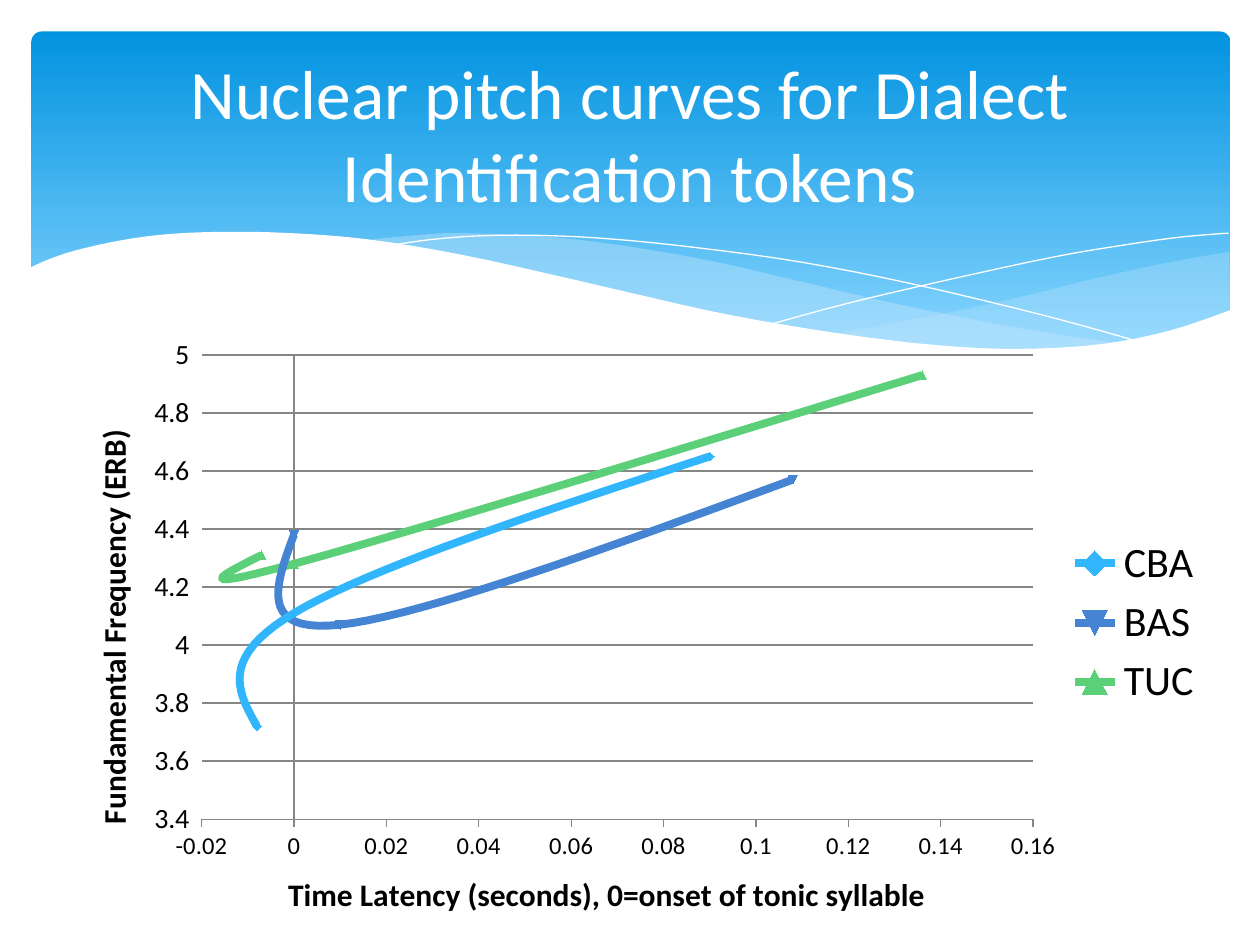
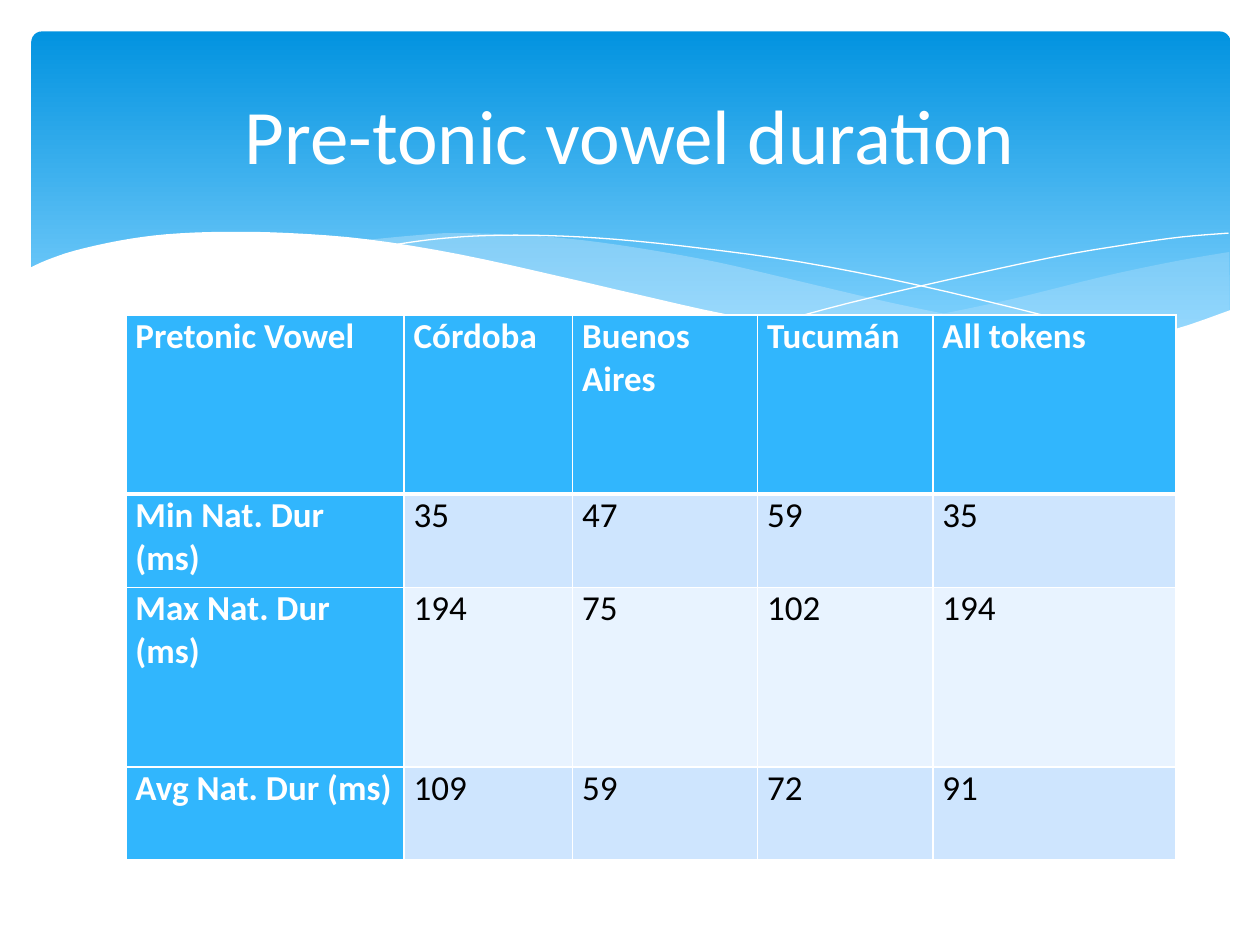
from dataclasses import dataclass

from lxml.etree import SubElement
from pptx import Presentation
from pptx.chart.axis import ValueAxis
from pptx.chart.data import XyChartData
from pptx.chart.series import XySeries
from pptx.dml.color import RGBColor
from pptx.enum.chart import XL_CHART_TYPE as ChartType
from pptx.enum.chart import XL_LEGEND_POSITION as LegendPosition
from pptx.enum.chart import XL_TICK_LABEL_POSITION as LabelPosition
from pptx.enum.chart import XL_TICK_MARK as TickMark
from pptx.enum.shapes import MSO_SHAPE as Shape
from pptx.enum.text import MSO_ANCHOR as Anchor
from pptx.enum.text import PP_ALIGN as Align
from pptx.oxml.ns import qn
from pptx.oxml.xmlchemy import BaseOxmlElement as Element
from pptx.slide import Slide
from pptx.table import _Cell as Cell
from pptx.text.text import Font
from pptx.util import Pt

FONT = "Calibri"
WHITE = RGBColor(0xFF, 0xFF, 0xFF)
BLACK = RGBColor(0x00, 0x00, 0x00)
GREY = RGBColor(0x86, 0x86, 0x86)
BAND_TOP = RGBColor(0x02, 0x93, 0xE0)
BAND_BOTTOM = RGBColor(0x83, 0xD3, 0xFE)
SWELL = RGBColor(0xC6, 0xE7, 0xFC)
SKY = RGBColor(0x31, 0xB6, 0xFD)
BLUE = RGBColor(0x45, 0x84, 0xD3)
GREEN = RGBColor(0x5B, 0xD0, 0x78)
ROW_TINTS = (RGBColor(0xCE, 0xE5, 0xFE), RGBColor(0xE8, 0xF3, 0xFF))

CURVE_STEPS = 4
THIN, THICK = 1, 3

Point = tuple[float, float]
Stroke = list[Point]


@dataclass(frozen=True)
class Wave:
    strokes: list[Stroke]
    fill: RGBColor
    opacity: int


@dataclass(frozen=True)
class Dialect:
    name: str
    colour: RGBColor
    points: list[Point]


@dataclass(frozen=True)
class AxisStyle:
    title: str
    title_at: Point
    minimum: float
    maximum: float
    step: float
    label_size: int
    gridlines: bool
    rotation: int


RIGHT_SWELL_TOP = [
    (702.5, 144), (673.2, 149), (641.5, 155.5), (619.9, 160.6),
    (579.6, 170.6), (542.2, 178.6), (508.3, 185), (475.9, 190.8)]
RIGHT_SWELL_BOTTOM = [
    (475.9, 190.8), (507.6, 195.1), (536.4, 198), (562.3, 199.4), (586, 200),
    (614.9, 198.7), (640, 195.8), (663.1, 190.8), (683.3, 185), (702.7, 177.8)]
MIDDLE_SWELL_TOP = [
    (643, 196.6), (602.6, 190.8), (558, 182.9), (508.3, 172.8),
    (452.9, 159.8), (409.7, 149.8), (370.1, 142.6), (334.8, 137.5),
    (302.4, 134.6), (259.9, 133.2), (236.2, 134.6), (205.9, 137.5)]
MIDDLE_SWELL_BOTTOM = [
    (205.9, 137.5), (246.2, 143.3), (290.9, 151.9), (323.3, 159.8),
    (381.6, 172.8), (432.7, 183.6), (478.8, 191.5), (519.8, 197.3),
    (556.6, 199.4), (589, 200.2), (617, 199.4), (643, 196.6)]
FALLING_LINE = [
    (222.5, 140.4), (236.2, 138.2), (254.2, 136.1), (278.6, 134.6),
    (311.8, 134.6), (352.1, 136.8), (400.3, 141.8), (457.9, 149.8),
    (523.4, 162.7), (598.3, 180.7), (653, 195.8)]
RISING_LINE = [
    (441.4, 185), (483.8, 173.5), (538.6, 160.6), (601.9, 146.9),
    (644.4, 139.7), (675.4, 135.4), (702, 133.2)]
PAGE_CREST = [
    (703.4, 177.1), (669.6, 188.6), (630, 196.6), (582.5, 199.4),
    (535.7, 197.3), (481, 190.8), (416.9, 180), (362.2, 167.8),
    (321.8, 158.4), (262.8, 145.4), (210.2, 136.8), (165.6, 133.2),
    (127.4, 132.5), (95, 133.9), (68.4, 137.5), (42.5, 143.3),
    (25.9, 149), (16.6, 153.4)]
PAGE_BASE = [(16.6, 236.9), (703.4, 236.9)]

SWELLS = [
    Wave([RIGHT_SWELL_TOP, RIGHT_SWELL_BOTTOM], SWELL, 29),
    Wave([MIDDLE_SWELL_TOP, MIDDLE_SWELL_BOTTOM], SWELL, 40),
]
PAGE_EDGE = Wave([PAGE_CREST, PAGE_BASE], WHITE, 100)

DIALECTS = [
    Dialect("CBA", SKY, [(-0.008, 3.72), (0, 4.11), (0.09, 4.65)]),
    Dialect("BAS", BLUE, [(0, 4.38), (0.01, 4.07), (0.108, 4.57)]),
    Dialect("TUC", GREEN, [(-0.007, 4.31), (0, 4.28), (0.136, 4.93)]),
]
TIME = AxisStyle(
    "Time Latency (seconds), 0=onset of tonic syllable", title_at=(0.19, 0.91),
    minimum=-0.02, maximum=0.16, step=0.02, label_size=14, gridlines=False, rotation=0)
FREQUENCY = AxisStyle(
    "Fundamental Frequency (ERB)", title_at=(0.02, 0.17),
    minimum=3.4, maximum=5, step=0.2, label_size=16, gridlines=True, rotation=-90)

DURATIONS = [
    ("Pretonic Vowel", "Córdoba", "Buenos Aires", "Tucumán", "All tokens"),
    ("Min Nat. Dur (ms)", "35", "47", "59", "35"),
    ("Max Nat. Dur (ms)", "194", "75", "102", "194"),
    ("Avg Nat. Dur (ms)", "109", "59", "72", "91"),
]
COLUMN_WIDTHS = (159, 96.3, 105.7, 100.2, 138.8)
ROW_HEIGHTS = (102.4, 53.4, 102.4, 53.4)


def style_font(font: Font, size: float, colour: RGBColor, bold: bool = False) -> None:
    font.name, font.size, font.bold = FONT, Pt(size), bold
    font.color.rgb = colour


def catmull_rom(before: float, start: float, end: float, after: float, t: float) -> float:
    slope = end - before
    bend = 2 * before - 5 * start + 4 * end - after
    twist = 3 * start - before - 3 * end + after
    return start + (slope * t + bend * t**2 + twist * t**3) / 2


def smooth(knots: Stroke) -> Stroke:
    if len(knots) < 3:
        return knots
    padded = [knots[0], *knots, knots[-1]]
    curve = [knots[0]]
    for neighbours in zip(padded, padded[1:], padded[2:], padded[3:]):
        xs, ys = zip(*neighbours)
        for step in range(1, CURVE_STEPS + 1):
            t = step / CURVE_STEPS
            curve.append((catmull_rom(*xs, t), catmull_rom(*ys, t)))
    return curve


def draw_outline(slide: Slide, strokes: list[Stroke], closed: bool) -> Shape:
    outline = [(Pt(x), Pt(y)) for stroke in strokes for x, y in smooth(stroke)]
    builder = slide.shapes.build_freeform(*outline[0])
    builder.add_line_segments(outline[1:], close=closed)
    shape = builder.convert_to_shape()
    shape.shadow.inherit = False
    return shape


def draw_wave(slide: Slide, wave: Wave) -> None:
    shape = draw_outline(slide, wave.strokes, closed=True)
    shape.line.fill.background()
    shape.fill.solid()
    shape.fill.fore_color.rgb = wave.fill
    if wave.opacity < 100:
        colour = shape.element.spPr.find(f"{qn('a:solidFill')}/{qn('a:srgbClr')}")
        SubElement(colour, qn("a:alpha"), val=str(wave.opacity * 1000))


def draw_hairline(slide: Slide, stroke: Stroke) -> None:
    shape = draw_outline(slide, [stroke], closed=False)
    shape.fill.background()
    shape.line.color.rgb = WHITE
    shape.line.width = Pt(0)


def draw_band(slide: Slide) -> None:
    band = slide.shapes.add_shape(Shape.ROUNDED_RECTANGLE, Pt(18), Pt(18), Pt(685), Pt(194.5))
    band.adjustments[0] = 0.03
    band.shadow.inherit = False
    band.line.fill.background()
    band.fill.gradient()
    band.fill.gradient_angle = 270
    for stop, colour, position in zip(band.fill.gradient_stops, (BAND_TOP, BAND_BOTTOM), (0, 0.9)):
        stop.color.rgb = colour
        stop.position = position


def draw_header(slide: Slide, title: str, size: float) -> None:
    draw_band(slide)
    for swell in SWELLS:
        draw_wave(slide, swell)
    for stroke in (FALLING_LINE, RISING_LINE):
        draw_hairline(slide, stroke)
    draw_wave(slide, PAGE_EDGE)

    frame = slide.shapes.add_textbox(Pt(36), Pt(27), Pt(648), Pt(98.6)).text_frame
    frame.word_wrap = True
    frame.vertical_anchor = Anchor.MIDDLE
    frame.text = title
    paragraph = frame.paragraphs[0]
    paragraph.alignment = Align.CENTER
    style_font(paragraph.runs[0].font, size, WHITE)


def place(parent: Element, index: int, **position: float | str) -> None:
    for automatic in parent.findall(qn("c:layout")):
        parent.remove(automatic)
    layout = parent.makeelement(qn("c:layout"))
    manual = SubElement(layout, qn("c:manualLayout"))
    for tag, value in position.items():
        SubElement(manual, qn(f"c:{tag}"), val=str(value))
    parent.insert(index, layout)


def style_axis(axis: ValueAxis, style: AxisStyle) -> None:
    axis.minimum_scale, axis.maximum_scale = style.minimum, style.maximum
    axis.major_unit = style.step
    axis.has_major_gridlines = style.gridlines
    if style.gridlines:
        axis.major_gridlines.format.line.color.rgb = GREY
    axis.format.line.color.rgb = GREY
    axis.major_tick_mark, axis.minor_tick_mark = TickMark.OUTSIDE, TickMark.NONE
    axis.tick_label_position = LabelPosition.LOW
    labels = axis.tick_labels
    labels.font.size = Pt(style.label_size)
    labels.number_format, labels.number_format_is_linked = "General", False

    title = axis.axis_title
    title.text_frame.text = style.title
    style_font(title.text_frame.paragraphs[0].runs[0].font, 18, BLACK, bold=True)
    body = title._element.find(f".//{qn('a:bodyPr')}")
    body.set("rot", str(style.rotation * 60000))
    body.set("vert", "horz")
    x, y = style.title_at
    place(title._element, 1, xMode="edge", yMode="edge", x=x, y=y)


def style_curve(series: XySeries, dialect: Dialect, marker_index: int) -> None:
    series._element.find(qn("c:idx")).set("val", str(marker_index))
    series._element.find(qn("c:smooth")).set("val", "1")
    series.format.line.width = Pt(4.5)
    series.marker.size = 5
    series.marker.format.fill.solid()
    for colour in (series.format.line.color, series.marker.format.fill.fore_color,
                   series.marker.format.line.color):
        colour.rgb = dialect.colour


def draw_pitch_chart(slide: Slide) -> None:
    data = XyChartData()
    for dialect in DIALECTS:
        curve = data.add_series(dialect.name)
        for time, pitch in dialect.points:
            curve.add_data_point(time, pitch)
    chart = slide.shapes.add_chart(
        ChartType.XY_SCATTER_SMOOTH, Pt(36), Pt(185.8), Pt(660), Pt(342), data).chart
    chart.has_title = False
    style_font(chart.font, 10, BLACK)
    chart.has_legend = True
    chart.legend.position = LegendPosition.RIGHT
    chart.legend.include_in_layout = False
    chart.legend.font.size = Pt(24)
    style_axis(chart.category_axis, TIME)
    style_axis(chart.value_axis, FREQUENCY)

    plot = chart.plots[0]
    plot.vary_by_categories = False
    for marker_index, (series, dialect) in enumerate(zip(plot.series, DIALECTS), start=1):
        style_curve(series, dialect, marker_index)
    place(chart._chartSpace.find(f".//{qn('c:plotArea')}"), 0, layoutTarget="inner",
          xMode="edge", yMode="edge", x=0.12, y=0.05, w=0.72, h=0.78)


def draw_borders(cell: Cell, top: float, bottom: float) -> None:
    properties = cell._tc.get_or_add_tcPr()
    for index, (side, width) in enumerate(zip("LRTB", (THIN, THIN, top, bottom))):
        line = properties.makeelement(qn(f"a:ln{side}"), {"w": str(Pt(width))})
        SubElement(SubElement(line, qn("a:solidFill")), qn("a:srgbClr"), val=str(WHITE))
        properties.insert(index, line)


def draw_duration_table(slide: Slide) -> None:
    table = slide.shapes.add_table(
        len(ROW_HEIGHTS), len(COLUMN_WIDTHS), Pt(72), Pt(180),
        Pt(sum(COLUMN_WIDTHS)), Pt(sum(ROW_HEIGHTS))).table
    for column, width in zip(table.columns, COLUMN_WIDTHS):
        column.width = Pt(width)
    for r, (row, height, entries) in enumerate(zip(table.rows, ROW_HEIGHTS, DURATIONS)):
        row.height = Pt(height)
        for c, (cell, entry) in enumerate(zip(row.cells, entries)):
            heading = r == 0 or c == 0
            cell.text_frame.text = entry
            cell.margin_left = cell.margin_right = Pt(5.4)
            cell.margin_top = cell.margin_bottom = Pt(0)
            style_font(cell.text_frame.paragraphs[0].runs[0].font, 20,
                       WHITE if heading else BLACK, bold=heading)
            cell.fill.solid()
            cell.fill.fore_color.rgb = SKY if heading else ROW_TINTS[(r - 1) % 2]
            draw_borders(cell, top=THICK if r == 1 else THIN, bottom=THICK if r == 0 else THIN)


def main() -> None:
    deck = Presentation()
    deck.slide_width, deck.slide_height = Pt(720), Pt(540)
    blank = deck.slide_layouts[6]

    pitch = deck.slides.add_slide(blank)
    draw_header(pitch, "Nuclear pitch curves for Dialect Identification tokens", 39.6)
    draw_pitch_chart(pitch)

    duration = deck.slides.add_slide(blank)
    draw_header(duration, "Pre-tonic vowel duration", 44)
    draw_duration_table(duration)
    deck.save("out.pptx")


if __name__ == "__main__":
    main()
